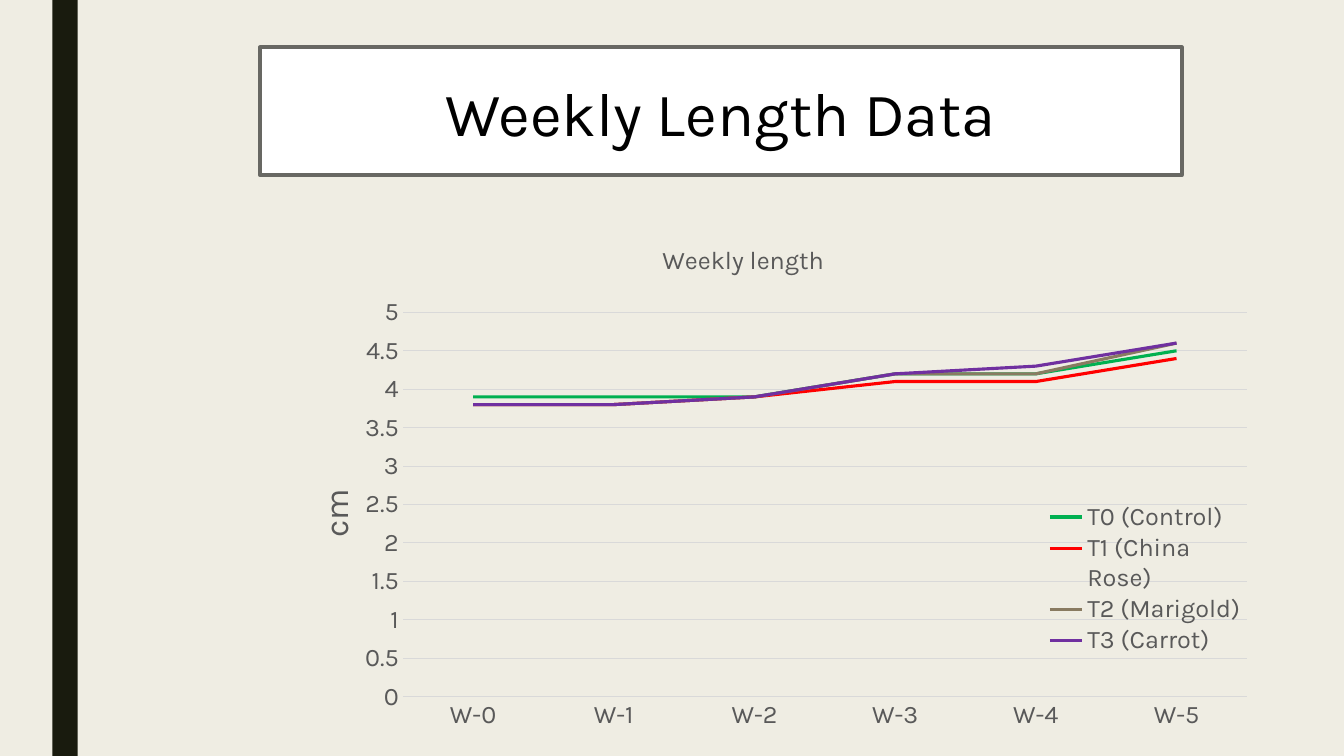
from lxml import etree
from pptx import Presentation
from pptx.chart.data import CategoryChartData
from pptx.dml.color import RGBColor
from pptx.enum.chart import XL_CHART_TYPE, XL_LEGEND_POSITION, XL_TICK_MARK
from pptx.enum.shapes import MSO_SHAPE
from pptx.enum.text import MSO_ANCHOR, PP_ALIGN
from pptx.oxml.ns import qn
from pptx.util import Inches, Pt

FONT = "Karla"
CREAM = RGBColor(0xEF, 0xED, 0xE3)
DARK = RGBColor(0x19, 0x1B, 0x0E)
WHITE = RGBColor(0xFF, 0xFF, 0xFF)
BLACK = RGBColor(0, 0, 0)
BORDER = RGBColor(0x68, 0x68, 0x63)
TEXT_GRAY = RGBColor(0x59, 0x59, 0x59)
GRID_GRAY = RGBColor(0xD9, 0xD9, 0xD9)

HEADING = "Weekly Length Data"
CHART_TITLE = "Weekly length"
AXIS_TITLE = "cm"
WEEKS = ["W-0", "W-1", "W-2", "W-3", "W-4", "W-5"]
TREATMENTS = [
    ("T0 (Control)", RGBColor(0x00, 0xB0, 0x50), [3.9, 3.9, 3.9, 4.2, 4.2, 4.5]),
    ("T1 (China Rose)", RGBColor(0xFF, 0x00, 0x00), [3.8, 3.8, 3.9, 4.1, 4.1, 4.4]),
    ("T2 (Marigold)", RGBColor(0x89, 0x7B, 0x61), [3.8, 3.8, 3.9, 4.2, 4.2, 4.6]),
    ("T3 (Carrot)", RGBColor(0x70, 0x30, 0xA0), [3.8, 3.8, 3.9, 4.2, 4.3, 4.6]),
]


def add_box(slide, left, top, width, height, fill):
    box = slide.shapes.add_shape(
        MSO_SHAPE.RECTANGLE, Inches(left), Inches(top), Inches(width), Inches(height))
    box.shadow.inherit = False
    box.fill.solid()
    box.fill.fore_color.rgb = fill
    box.line.fill.background()
    return box


def style_font(font, size, color):
    font.name = FONT
    font.size = Pt(size)
    font.bold = False
    font.color.rgb = color


def style_line(line, color, width):
    line.color.rgb = color
    line.width = Pt(width)


def set_title(owner, title, text, size):
    owner.has_title = True
    title.text_frame.text = text
    style_font(title.text_frame.paragraphs[0].runs[0].font, size, TEXT_GRAY)


def place(element, after=None, inner=False, **fractions):
    """Give a chart part a manual layout in fractions of the chart area."""
    for old in element.findall(qn("c:layout")):
        element.remove(old)
    layout = etree.Element(qn("c:layout"))
    manual = etree.SubElement(layout, qn("c:manualLayout"))
    settings = [("layoutTarget", "inner")] if inner else []
    settings += [("xMode", "edge"), ("yMode", "edge"), *fractions.items()]
    for name, value in settings:
        etree.SubElement(manual, qn(f"c:{name}")).set("val", str(value))
    if after:
        element.find(qn(after)).addnext(layout)
    else:
        element.insert(0, layout)


def add_length_chart(slide):
    data = CategoryChartData()
    data.categories = WEEKS
    for name, _, lengths in TREATMENTS:
        data.add_series(name, lengths)
    chart = slide.shapes.add_chart(
        XL_CHART_TYPE.LINE, Inches(1.53), Inches(1.74),
        Inches(10.86), Inches(5.76), data).chart
    style_font(chart.font, 10, BLACK)
    chart.plots[0].vary_by_categories = False
    for series, (_, color, _) in zip(chart.plots[0].series, TREATMENTS):
        series.smooth = False
        style_line(series.format.line, color, 2.25)

    week_axis, length_axis = chart.category_axis, chart.value_axis
    for axis in (week_axis, length_axis):
        axis.major_tick_mark = axis.minor_tick_mark = XL_TICK_MARK.NONE
        style_font(axis.tick_labels.font, 18, TEXT_GRAY)
    style_line(week_axis.format.line, GRID_GRAY, 0.75)
    length_axis.format.line.fill.background()
    length_axis.minimum_scale, length_axis.maximum_scale = 0, 5
    length_axis.major_unit = 0.5
    length_axis.tick_labels.number_format = "General"
    length_axis.tick_labels.number_format_is_linked = False
    style_line(length_axis.major_gridlines.format.line, GRID_GRAY, 0.75)

    set_title(chart, chart.chart_title, CHART_TITLE, 18)
    set_title(length_axis, length_axis.axis_title, AXIS_TITLE, 24)
    length_axis.axis_title.text_frame._txBody.bodyPr.set("rot", "-5400000")

    chart.has_legend = True
    chart.legend.position = XL_LEGEND_POSITION.RIGHT
    chart.legend.include_in_layout = False
    style_font(chart.legend.font, 18, TEXT_GRAY)

    area = chart.element.find(qn("c:chart"))
    plot_area = area.find(qn("c:plotArea"))
    place(plot_area, inner=True, x=0.227, y=0.236, w=0.771, h=0.662)
    place(area.find(qn("c:title")), "c:tx", x=0.46, y=0.11)
    place(plot_area.find(f"{qn('c:valAx')}/{qn('c:title')}"), "c:tx", x=0.14, y=0.53)
    place(area.find(qn("c:legend")), "c:legendPos", x=0.81, y=0.56, w=0.19, h=0.27)


def main():
    presentation = Presentation()
    presentation.slide_width, presentation.slide_height = Inches(13.33), Inches(7.5)
    slide = presentation.slides.add_slide(presentation.slide_layouts[6])
    slide.background.fill.solid()
    slide.background.fill.fore_color.rgb = CREAM

    add_box(slide, 0.52, 0, 0.25, 7.5, DARK)
    heading = add_box(slide, 2.58, 0.47, 9.14, 1.27, WHITE)
    style_line(heading.line, BORDER, 2.75)
    heading.text_frame.text = HEADING
    heading.text_frame.vertical_anchor = MSO_ANCHOR.MIDDLE
    paragraph = heading.text_frame.paragraphs[0]
    paragraph.alignment = PP_ALIGN.CENTER
    style_font(paragraph.runs[0].font, 44, BLACK)

    add_length_chart(slide)
    presentation.save("out.pptx")


if __name__ == "__main__":
    main()
